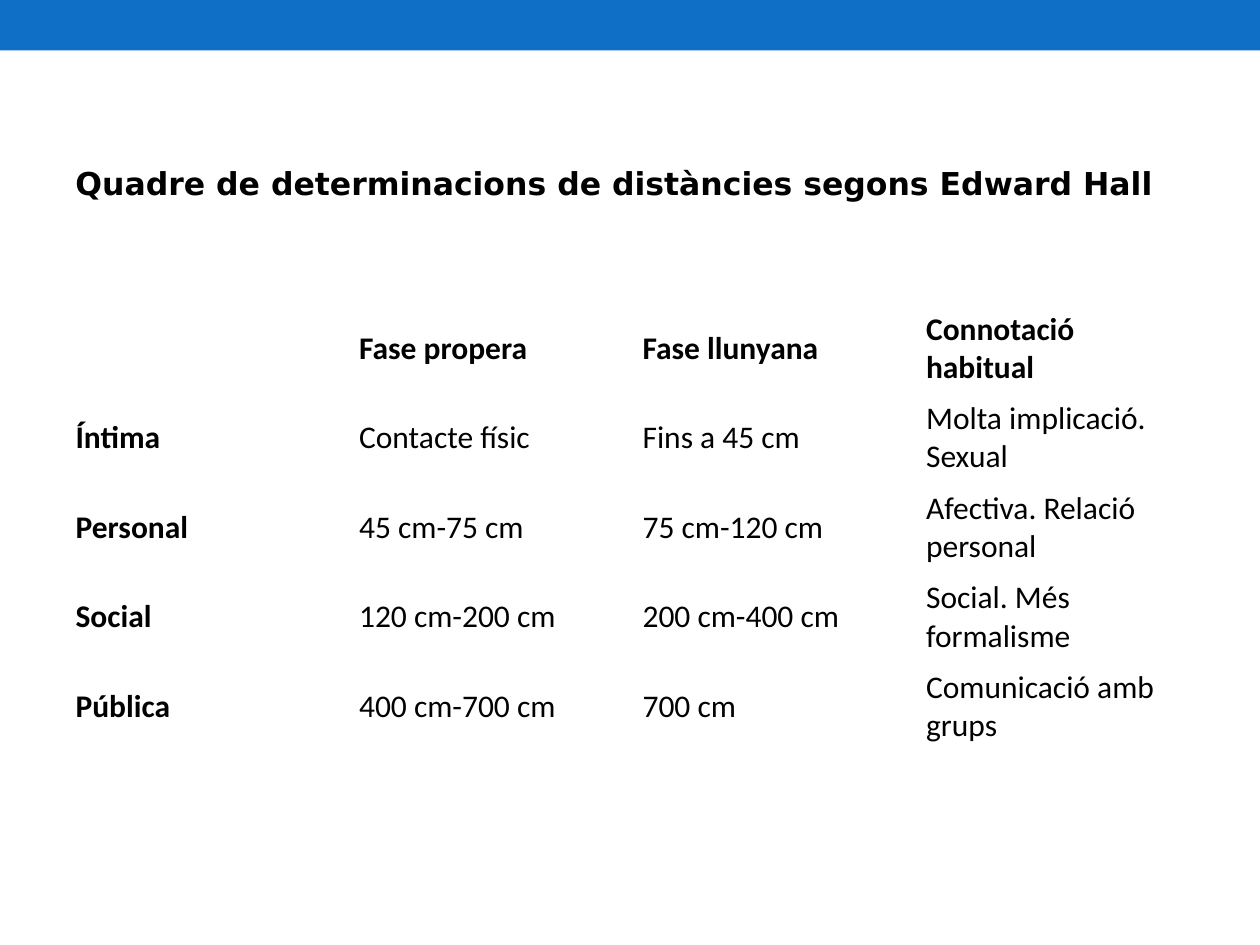
from pptx import Presentation
from pptx.dml.color import RGBColor
from pptx.enum.shapes import MSO_SHAPE
from pptx.enum.text import MSO_ANCHOR, MSO_AUTO_SIZE
from pptx.util import Inches, Pt

TITLE = "Quadre de determinacions de distàncies segons Edward Hall"
DISTANCES = [
    ("", "Fase propera", "Fase llunyana", "Connotació habitual"),
    ("Íntima", "Contacte físic", "Fins a 45 cm", "Molta implicació. Sexual"),
    ("Personal", "45 cm-75 cm", "75 cm-120 cm", "Afectiva. Relació personal"),
    ("Social", "120 cm-200 cm", "200 cm-400 cm", "Social. Més formalisme"),
    ("Pública", "400 cm-700 cm", "700 cm", "Comunicació amb grups"),
]
BLUE = RGBColor(0x0F, 0x6F, 0xC6)
BLACK = RGBColor(0, 0, 0)
MARGIN = Inches(0.5)
ROW_HEIGHT = Inches(0.71)


def format_text(text_frame, font_name, bold):
    font = text_frame.paragraphs[0].font
    for run in text_frame.paragraphs[0].runs:
        font = run.font
    font.name = font_name
    font.size = Pt(18)
    font.bold = bold
    font.color.rgb = BLACK


def add_band(slide, width):
    band = slide.shapes.add_shape(MSO_SHAPE.RECTANGLE, 0, 0, width, Inches(0.4))
    band.shadow.inherit = False
    band.fill.solid()
    band.fill.fore_color.rgb = BLUE
    band.line.fill.background()


def add_distance_table(slide, width):
    row_count, column_count = len(DISTANCES), len(DISTANCES[0])
    table = slide.shapes.add_table(
        row_count, column_count, MARGIN, Inches(2.41), width, ROW_HEIGHT * row_count
    ).table
    table.first_row = False
    table.horz_banding = False
    for row_index, row in enumerate(DISTANCES):
        table.rows[row_index].height = ROW_HEIGHT
        for column_index, text in enumerate(row):
            cell = table.cell(row_index, column_index)
            cell.fill.background()
            cell.vertical_anchor = MSO_ANCHOR.MIDDLE
            cell.text_frame.text = text
            format_text(cell.text_frame, "Calibri", row_index == 0 or column_index == 0)


def add_title(slide):
    title = slide.shapes.add_textbox(MARGIN, Inches(1.25), Inches(8.79), Inches(0.4))
    title.text_frame.word_wrap = True
    title.text_frame.auto_size = MSO_AUTO_SIZE.SHAPE_TO_FIT_TEXT
    title.text_frame.text = TITLE
    format_text(title.text_frame, "DejaVu Sans", True)


def main():
    presentation = Presentation()
    presentation.slide_width = Inches(10)
    presentation.slide_height = Inches(7.5)
    slide = presentation.slides.add_slide(presentation.slide_layouts[6])
    add_band(slide, presentation.slide_width)
    add_distance_table(slide, presentation.slide_width - 2 * MARGIN)
    add_title(slide)
    presentation.save("out.pptx")


if __name__ == "__main__":
    main()
